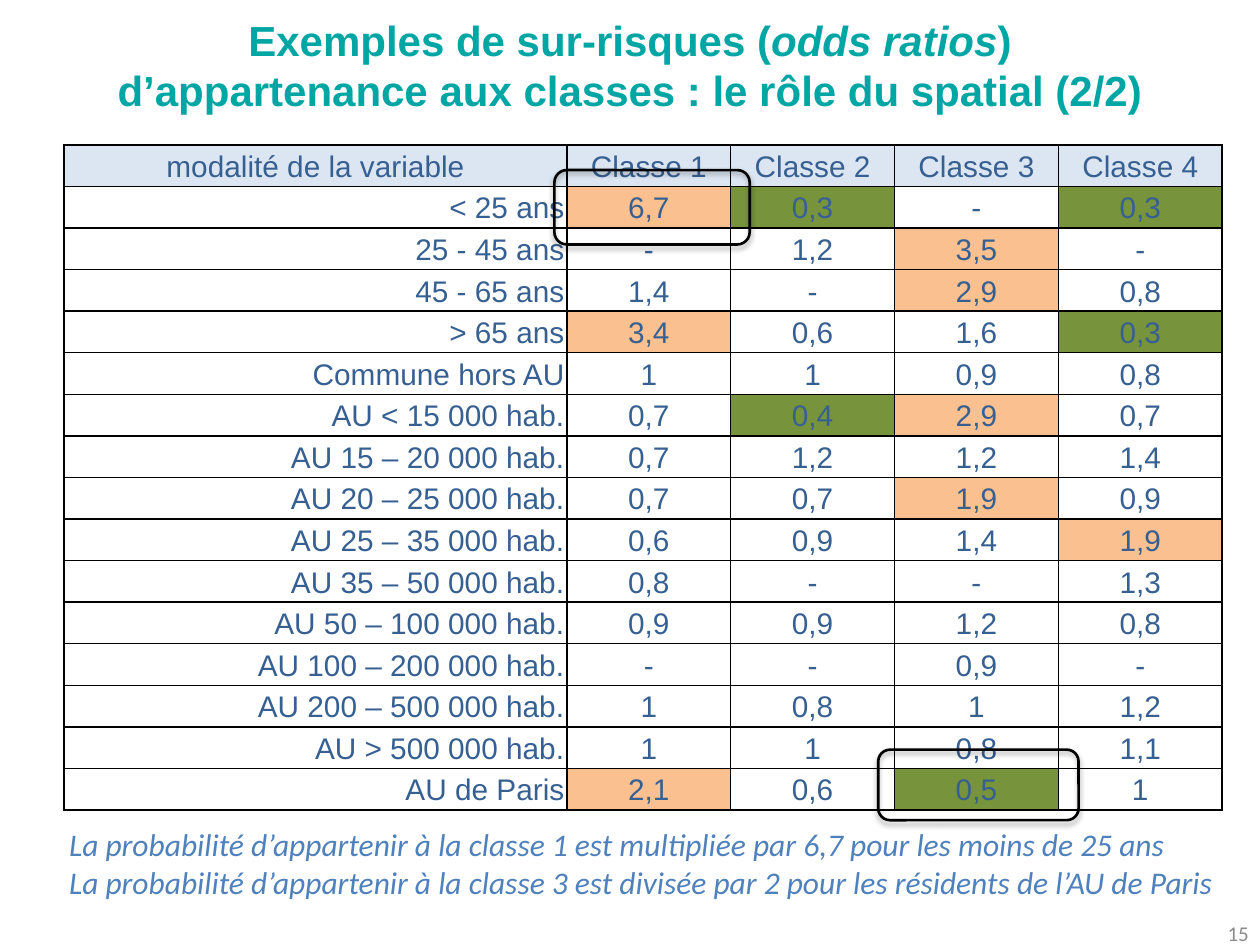
from copy import deepcopy

from lxml import etree
from pptx import Presentation
from pptx import util as u
from pptx.dml.color import RGBColor
from pptx.enum import shapes, text
from pptx.oxml import parse_xml
from pptx.oxml.ns import nsdecls, qn

WIDTH, HEIGHT = 10, 7.5
TABLE_LEFT, TABLE_TOP = 0.51, 1.15
LABEL_WIDTH, CLASS_WIDTH, ROW_HEIGHT = 3.99, 1.3, 0.33
HIGH, LOW = 1.9, 0.5
HEADER_FILL, HIGH_FILL, LOW_FILL = "DCE6F2", "FAC090", "77933C"

TITLE = [
    ("Exemples de sur-risques (", False),
    ("odds ratios", True),
    (")\nd’appartenance aux classes : le rôle du spatial (2/2)", False),
]
ROWS = [
    ("modalité de la variable", "Classe 1", "Classe 2", "Classe 3", "Classe 4"),
    ("< 25 ans", "6,7", "0,3", "-", "0,3"),
    ("25 - 45 ans", "-", "1,2", "3,5", "-"),
    ("45 - 65 ans", "1,4", "-", "2,9", "0,8"),
    ("> 65 ans", "3,4", "0,6", "1,6", "0,3"),
    ("Commune hors AU", "1", "1", "0,9", "0,8"),
    ("AU < 15 000 hab.", "0,7", "0,4", "2,9", "0,7"),
    ("AU 15 – 20 000 hab.", "0,7", "1,2", "1,2", "1,4"),
    ("AU 20 – 25 000 hab.", "0,7", "0,7", "1,9", "0,9"),
    ("AU 25 – 35 000 hab.", "0,6", "0,9", "1,4", "1,9"),
    ("AU 35 – 50 000 hab.", "0,8", "-", "-", "1,3"),
    ("AU 50 – 100 000 hab.", "0,9", "0,9", "1,2", "0,8"),
    ("AU 100 – 200 000 hab.", "-", "-", "0,9", "-"),
    ("AU 200 – 500 000 hab.", "1", "0,8", "1", "1,2"),
    ("AU > 500 000 hab.", "1", "1", "0,8", "1,1"),
    ("AU de Paris", "2,1", "0,6", "0,5", "1"),
]
READINGS = [
    "La probabilité d’appartenir à la classe 1 est multipliée par 6,7 pour les moins de 25 ans",
    "La probabilité d’appartenir à la classe 3 est divisée par 2 pour les résidents de l’AU de Paris",
]
RINGS = [(6.97, 5.95, 1.59, 0.56), (4.4, 1.35, 1.55, 0.59)]
ALIGN = {"l": text.PP_ALIGN.LEFT, "c": text.PP_ALIGN.CENTER, "r": text.PP_ALIGN.RIGHT}


def color(value):
    return RGBColor.from_string(value)


def box(*lengths):
    return [u.Inches(length) for length in lengths]


def write(paragraph, content, size, ink, font="Arial", align="l", bold=False, italic=False):
    paragraph.alignment = ALIGN[align]
    runs = [(content, italic)] if isinstance(content, str) else content
    for words, slanted in runs:
        for number, line in enumerate(words.split("\n")):
            if number:
                paragraph.add_line_break()
                line_break = paragraph._p.findall(qn("a:br"))[-1]
                line_break.append(deepcopy(run.font._element))
            run = paragraph.add_run()
            run.text = line
            run.font.name, run.font.size = font, u.Pt(size)
            run.font.bold, run.font.italic = bold, slanted
            run.font.color.rgb = color(ink)


def add_borders(cell):
    properties = cell._tc.get_or_add_tcPr()
    for side in ("lnL", "lnR", "lnT", "lnB"):
        properties.append(parse_xml(
            f'<a:{side} {nsdecls("a")} w="12700"><a:solidFill>'
            f'<a:srgbClr val="000000"/></a:solidFill></a:{side}>'))


def cell_fill(row, column, value):
    if row == 0:
        return HEADER_FILL
    if column == 0 or value == "-":
        return None
    ratio = float(value.replace(",", "."))
    return HIGH_FILL if ratio >= HIGH else LOW_FILL if ratio <= LOW else None


def add_table(slide):
    class_count = len(ROWS[0]) - 1
    frame = slide.shapes.add_table(
        len(ROWS), class_count + 1,
        *box(TABLE_LEFT, TABLE_TOP, LABEL_WIDTH + class_count * CLASS_WIDTH, len(ROWS) * ROW_HEIGHT))
    table = frame.table
    for column, table_column in enumerate(table.columns):
        table_column.width = u.Inches(CLASS_WIDTH if column else LABEL_WIDTH)
    for row, values in enumerate(ROWS):
        table.rows[row].height = u.Inches(ROW_HEIGHT)
        for column, value in enumerate(values):
            cell = table.cell(row, column)
            cell.margin_left = cell.margin_right = cell.margin_top = u.Inches(0.02)
            cell.margin_bottom = 0
            cell.vertical_anchor = text.MSO_ANCHOR.MIDDLE
            write(cell.text_frame.paragraphs[0], value, 17, "376092",
                  align="r" if row and not column else "c")
            add_borders(cell)
            fill = cell_fill(row, column, value)
            if fill:
                cell.fill.solid()
                cell.fill.fore_color.rgb = color(fill)
            else:
                cell.fill.background()


def add_title(slide):
    title = slide.shapes.title
    title.left, title.top, title.width, title.height = box(0, 0.21, WIDTH, 0.61)
    frame = title.text_frame
    frame.auto_size = text.MSO_AUTO_SIZE.NONE
    frame.vertical_anchor = text.MSO_ANCHOR.MIDDLE
    write(frame.paragraphs[0], TITLE, 24, "00A6A4", align="c", bold=True)


def add_ring(slide, place):
    ring = slide.shapes.add_shape(shapes.MSO_SHAPE.ROUNDED_RECTANGLE, *box(*place))
    ring.fill.background()
    ring.line.color.rgb = color("000000")
    ring.line.width = u.Pt(1.5)
    ring.shadow.inherit = False
    effects = ring._element.spPr.find(qn("a:effectLst"))
    shadow = etree.SubElement(effects, qn("a:outerShdw"), blurRad=str(u.Pt(3.1)),
                              dist=str(u.Pt(1.8)), dir="5400000", rotWithShape="0")
    shade = etree.SubElement(shadow, qn("a:srgbClr"), val="000000")
    etree.SubElement(shade, qn("a:alpha"), val="35000")


def add_page_number(slide):
    frame = slide.shapes.add_textbox(*box(7.68, 7.21, 2.33, 0.4)).text_frame
    frame.word_wrap = True
    frame.vertical_anchor = text.MSO_ANCHOR.MIDDLE
    write(frame.paragraphs[0], "15", 12, "8C8C8C", font="Calibri", align="r")


def add_readings(slide):
    frame = slide.shapes.add_textbox(*box(0.45, 6.5, 9.56, 0.71)).text_frame
    frame.word_wrap = False
    frame.auto_size = text.MSO_AUTO_SIZE.SHAPE_TO_FIT_TEXT
    for number, reading in enumerate(READINGS):
        paragraph = frame.add_paragraph() if number else frame.paragraphs[0]
        write(paragraph, reading, 18, "4F81BD", font="Calibri", italic=True)


def main():
    presentation = Presentation()
    presentation.slide_width, presentation.slide_height = box(WIDTH, HEIGHT)
    slide = presentation.slides.add_slide(presentation.slide_layouts[5])
    add_table(slide)
    add_title(slide)
    add_page_number(slide)
    for place in RINGS:
        add_ring(slide, place)
    add_readings(slide)
    presentation.save("out.pptx")


if __name__ == "__main__":
    main()
